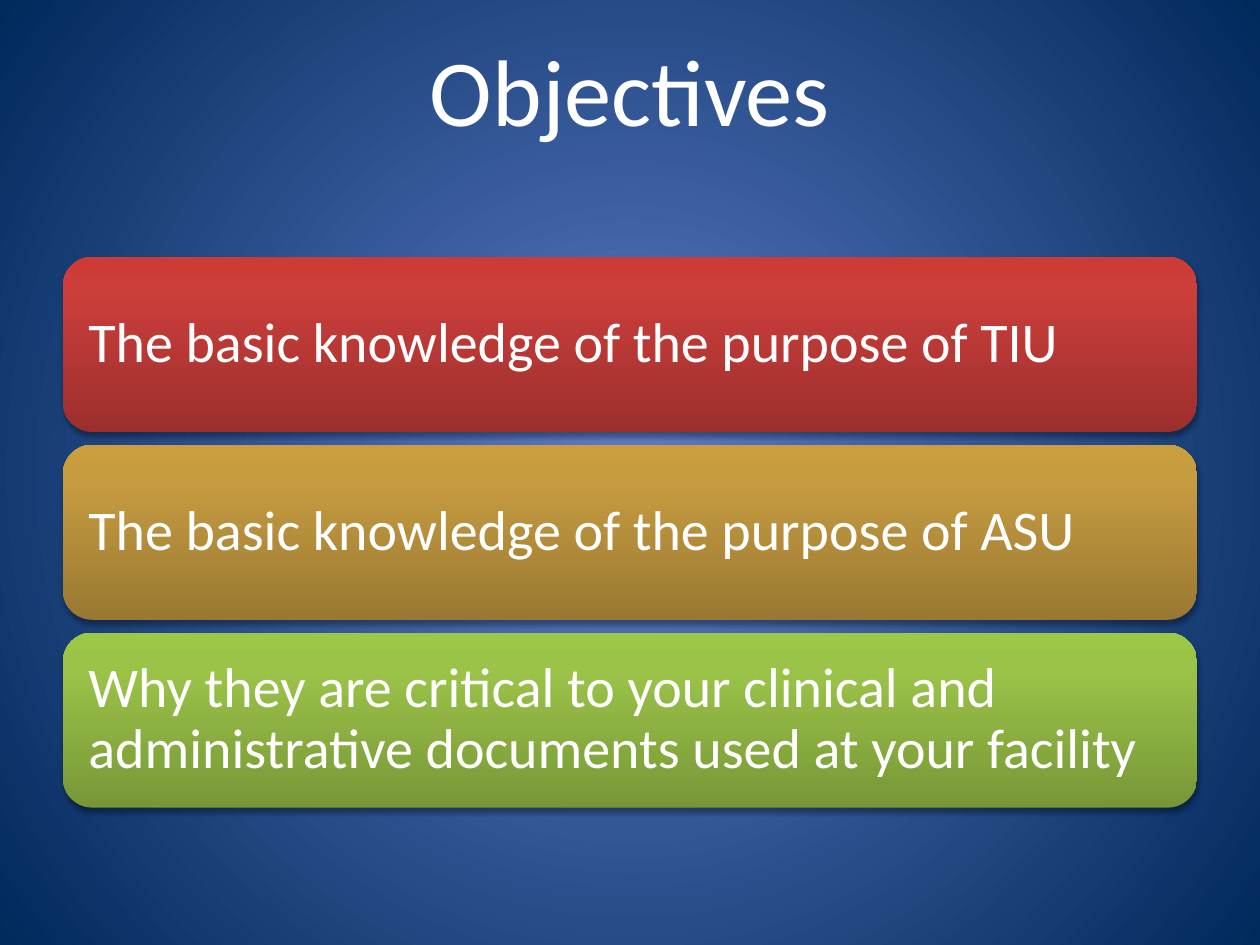
from pptx import Presentation
from pptx.dml.color import RGBColor
from pptx.enum.shapes import MSO_SHAPE as Shape
from pptx.enum.text import MSO_ANCHOR as Anchor, PP_ALIGN as Align
from pptx.oxml import parse_xml
from pptx.oxml.ns import nsdecls, qn
from pptx.util import Cm, Pt

FONT = "Calibri"
WHITE = RGBColor(0xFF, 0xFF, 0xFF)
BLACK = RGBColor(0x00, 0x00, 0x00)
GLOW_BLUE = RGBColor(0x5E, 0x7C, 0xC5)
NAVY = RGBColor(0x00, 0x29, 0x5C)
RED = [RGBColor(0x9C, 0x2F, 0x2D), RGBColor(0xCB, 0x3E, 0x3A), RGBColor(0xCE, 0x3B, 0x37)]
GOLD = [RGBColor(0x99, 0x78, 0x32), RGBColor(0xC7, 0x9C, 0x41), RGBColor(0xCB, 0x9D, 0x3F)]
GREEN = [RGBColor(0x77, 0x97, 0x37), RGBColor(0x9B, 0xC3, 0x48), RGBColor(0x9D, 0xC7, 0x46)]

OBJECTIVES = [
    ("The basic knowledge of the purpose of TIU", RED),
    ("The basic knowledge of the purpose of ASU", GOLD),
    ("Why they are critical to your clinical and administrative documents "
     "used at your facility", GREEN),
]
UPWARD = '<a:lin ang="16200000" scaled="0"/>'
FROM_CENTRE = ('<a:path path="circle"><a:fillToRect l="50000" t="50000" '
               'r="50000" b="50000"/></a:path>')


def set_gradient(fill, owner, colours, positions, direction):
    """Give the fill, found below the owner element, its own colour stops."""
    fill.gradient()
    stops = "".join(
        f'<a:gs pos="{position * 1000}"><a:srgbClr val="{colour}"/></a:gs>'
        for colour, position in zip(colours, positions))
    gradient = owner.find(".//" + qn("a:gradFill"))
    gradient.getparent().replace(gradient, parse_xml(
        f'<a:gradFill {nsdecls("a")} rotWithShape="1">'
        f"<a:gsLst>{stops}</a:gsLst>{direction}</a:gradFill>"))


def add_soft_shadow(shape):
    shape.shadow.inherit = False
    effects = shape.element.spPr.find(qn("a:effectLst"))
    effects.append(parse_xml(
        f'<a:outerShdw {nsdecls("a")} blurRad="{Pt(3.1)}" dist="{Pt(1.8)}" '
        f'dir="5400000" rotWithShape="0"><a:srgbClr val="{BLACK}">'
        '<a:alpha val="35000"/></a:srgbClr></a:outerShdw>'))


def write_text(shape, text, size, align):
    frame = shape.text_frame
    frame.word_wrap = True
    frame.vertical_anchor = Anchor.MIDDLE
    frame.text = text
    paragraph = frame.paragraphs[0]
    paragraph.alignment = align
    font = paragraph.runs[0].font
    font.name, font.size, font.color.rgb = FONT, Pt(size), WHITE
    return paragraph


def add_title(slide, left, top, width, height):
    title = slide.shapes.add_textbox(left, top, width, height)
    write_text(title, "Objectives", 54, Align.CENTER)


def add_objectives(slide, left, top, width, height, gap=Cm(0.26)):
    """Stack one bar per objective so that they fill the box."""
    count = len(OBJECTIVES)
    bar_height = (height - gap * (count - 1)) // count
    for row, (objective, colours) in enumerate(OBJECTIVES):
        bar = slide.shapes.add_shape(
            Shape.ROUNDED_RECTANGLE, left, top + row * (bar_height + gap),
            width, bar_height)
        set_gradient(bar.fill, bar.element.spPr, colours, (0, 80, 100), UPWARD)
        bar.line.fill.background()
        add_soft_shadow(bar)
        frame = bar.text_frame
        frame.margin_left = frame.margin_right = Cm(0.34)
        frame.margin_top = frame.margin_bottom = Cm(0.34)
        write_text(bar, objective, 32, Align.LEFT).line_spacing = 0.9


def main():
    deck = Presentation()
    deck.slide_width, deck.slide_height = Cm(25.4), Cm(19.05)
    slide = deck.slides.add_slide(deck.slide_layouts[6])
    set_gradient(slide.background.fill, slide.element, (GLOW_BLUE, NAVY),
                 (0, 100), FROM_CENTRE)
    add_objectives(slide, Cm(1.27), Cm(5.18), Cm(22.86), Cm(11.1))
    add_title(slide, Cm(1.27), Cm(0.2), Cm(22.86), Cm(3.18))
    deck.save("out.pptx")


if __name__ == "__main__":
    main()
